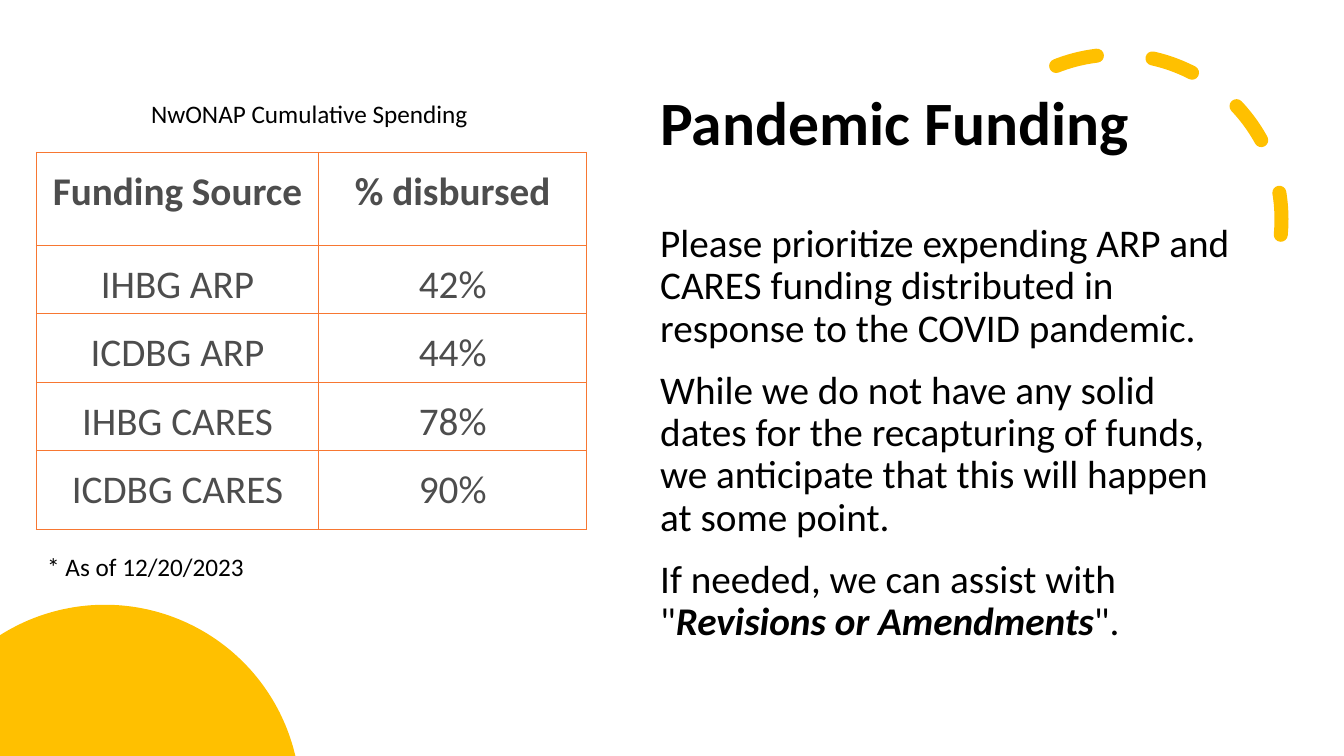
from math import acos, asin, cos, pi, sin

from lxml.etree import SubElement
from pptx import Presentation
from pptx.dml.color import RGBColor
from pptx.enum.dml import MSO_LINE
from pptx.enum.shapes import MSO_SHAPE
from pptx.enum.text import MSO_ANCHOR, MSO_AUTO_SIZE, PP_ALIGN
from pptx.oxml.ns import qn
from pptx.util import Emu, Pt

PX = 9144  # 100 px to the inch
FONT = "Calibri"
COLORS = {"text": "000000", "table": "4D4D4D", "border": "F77732", "accent": "FFC000"}

COLUMN_WIDTHS = [280, 266]
ROW_HEIGHTS = [92, 68, 68, 68, 78]
SPENDING = [
    ("Funding Source", "% disbursed"),
    ("IHBG ARP", "42%"),
    ("ICDBG ARP", "44%"),
    ("IHBG CARES", "78%"),
    ("ICDBG CARES", "90%"),
]
MESSAGE = [
    [("Please prioritize expending ARP and CARES funding distributed in "
      "response to the COVID pandemic.", False)],
    [("While we do not have any solid dates for the recapturing of funds, "
      "we anticipate that this will happen at some point.", False)],
    [("If needed, we can assist with \"", False),
     ("Revisions or Amendments", True), ("\".", False)],
]


def px(value):
    return Emu(round(value * PX))


def color(name):
    return RGBColor.from_string(COLORS[name])


def add_span(para, text, size, shade="text", bold=False, italic=False):
    span = para.add_run()
    span.text = text
    span.font.name = FONT
    span.font.size = Pt(size)
    span.font.bold = bold
    span.font.italic = italic
    span.font.color.rgb = color(shade)


def add_text_box(page, left, top, width, height, wrap=True):
    box = page.shapes.add_textbox(px(left), px(top), px(width), px(height))
    box.text_frame.word_wrap = wrap
    return box.text_frame


def add_label(page, left, top, width, text):
    frame = add_text_box(page, left, top, width, 40, wrap=False)
    frame.auto_size = MSO_AUTO_SIZE.SHAPE_TO_FIT_TEXT
    add_span(frame.paragraphs[0], text, 18)


def add_title(page, text):
    frame = add_text_box(page, 645, 52, 597, 145)
    frame.vertical_anchor = MSO_ANCHOR.MIDDLE
    para = frame.paragraphs[0]
    para.line_spacing = 0.9
    add_span(para, text, 44, bold=True)


def add_message(page, paragraphs):
    frame = add_text_box(page, 645, 217, 597, 458)
    for index, spans in enumerate(paragraphs):
        para = frame.add_paragraph() if index else frame.paragraphs[0]
        para.line_spacing = 0.9
        para.space_after = Pt(14)
        for text, strong in spans:
            add_span(para, text, 28, bold=strong, italic=strong)


def add_dashed_arc(page):
    arc = page.shapes.add_shape(MSO_SHAPE.ARC, px(944), px(54), px(327), px(327))
    arc.shadow.inherit = False
    arc.fill.background()
    # 0.6 units to the degree: runs from about 241 to 360 degrees
    arc.adjustments[0] = 144.42
    arc.adjustments[1] = 0
    arc.rotation = 66.1
    arc._element.spPr.find(qn("a:xfrm")).set("flipH", "1")
    arc.line.color.rgb = color("accent")
    arc.line.width = Pt(10)
    arc.line.dash_style = MSO_LINE.DASH
    arc.line._ln.set("cap", "rnd")


def add_corner_circle(page, center_x, center_y, radius, bottom, steps=80):
    # Visible part of a circle cut by the left and bottom page edges
    start = pi - acos(center_x / radius)
    end = asin((center_y - bottom) / radius)
    angles = [start + (end - start) * step / steps for step in range(steps + 1)]
    points = [(center_x + radius * cos(angle), center_y - radius * sin(angle))
              for angle in angles]
    builder = page.shapes.build_freeform(0, px(bottom), scale=1.0)
    builder.add_line_segments([(px(x), px(y)) for x, y in points], close=True)
    circle = builder.convert_to_shape()
    circle.shadow.inherit = False
    circle.fill.solid()
    circle.fill.fore_color.rgb = color("accent")
    circle.line.fill.background()


def set_borders(cell):
    properties = cell._tc.get_or_add_tcPr()
    for position, side in enumerate(("lnL", "lnR", "lnT", "lnB")):
        line = SubElement(properties, qn(f"a:{side}"), w=str(Pt(0.5)))
        fill = SubElement(line, qn("a:solidFill"))
        SubElement(fill, qn("a:srgbClr"), val=COLORS["border"])
        properties.insert(position, line)


def fill_cell(cell, text, bold):
    cell.fill.background()
    cell.margin_left = cell.margin_right = px(4)
    cell.margin_top = cell.margin_bottom = px(4)
    para = cell.text_frame.paragraphs[0]
    para.alignment = PP_ALIGN.CENTER
    para.line_spacing = 1.25
    para.space_after = Pt(10)
    add_span(para, text, 28, "table", bold)
    set_borders(cell)


def add_spending_table(page):
    frame = page.shapes.add_table(
        len(SPENDING), len(COLUMN_WIDTHS), px(36), px(151),
        px(sum(COLUMN_WIDTHS)), px(sum(ROW_HEIGHTS)))
    table = frame.table
    table.first_row = table.horz_banding = False
    for column, width in zip(table.columns, COLUMN_WIDTHS):
        column.width = px(width)
    for index, (row, height) in enumerate(zip(table.rows, ROW_HEIGHTS)):
        row.height = px(height)
        for cell, text in zip(row.cells, SPENDING[index]):
            fill_cell(cell, text, bold=index == 0)


def main():
    deck = Presentation()
    deck.slide_width, deck.slide_height = px(1333), px(750)
    page = deck.slides.add_slide(deck.slide_layouts[6])

    # Decoration and message
    add_dashed_arc(page)
    add_title(page, "Pandemic Funding")
    add_corner_circle(page, center_x=104, center_y=794, radius=194, bottom=750)
    add_message(page, MESSAGE)

    # Spending table with its caption and date
    add_spending_table(page)
    add_label(page, 140, 93, 338, "NwONAP Cumulative Spending")
    add_label(page, 37, 542, 218, "* As of 12/20/2023")

    deck.save("out.pptx")


if __name__ == "__main__":
    main()
